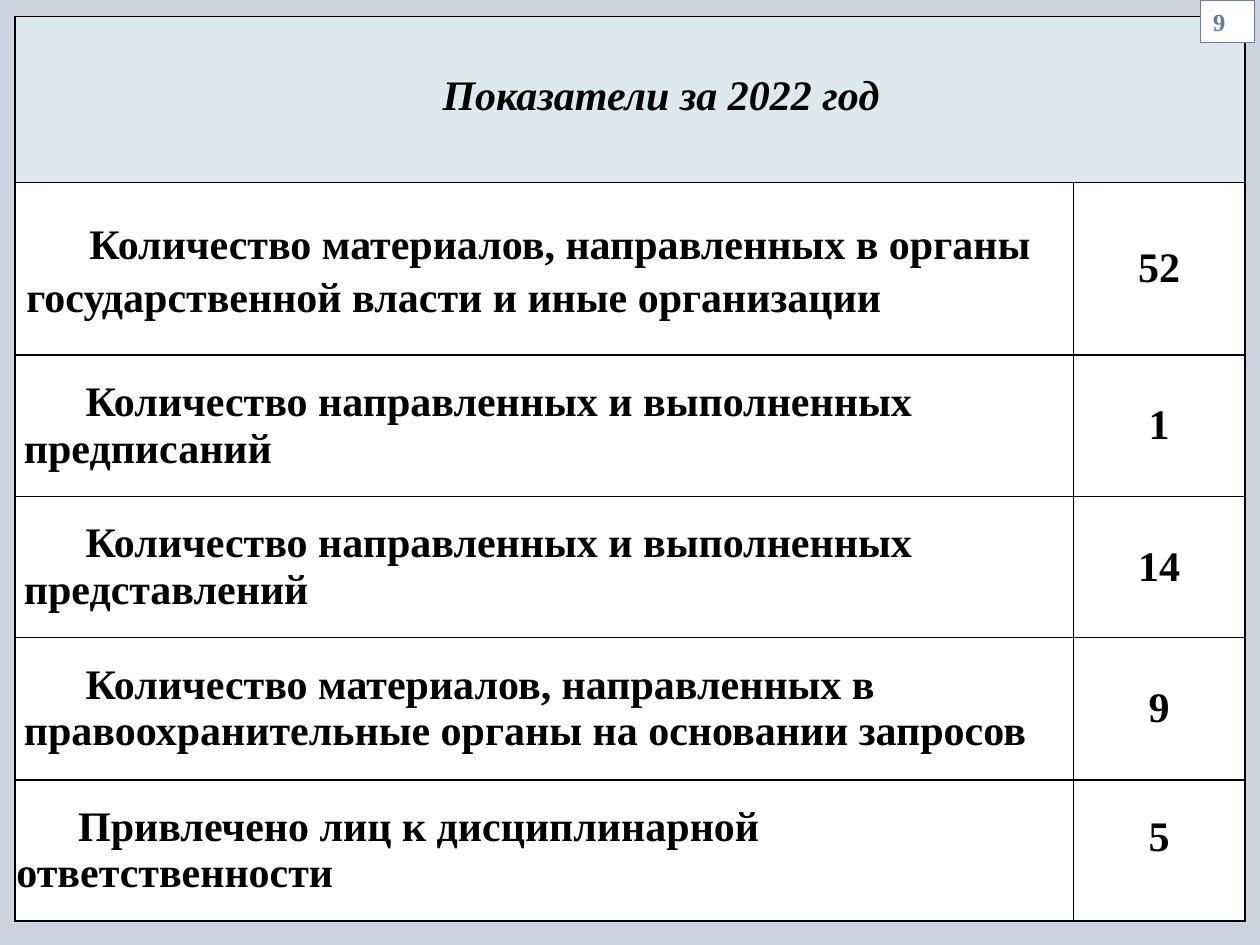
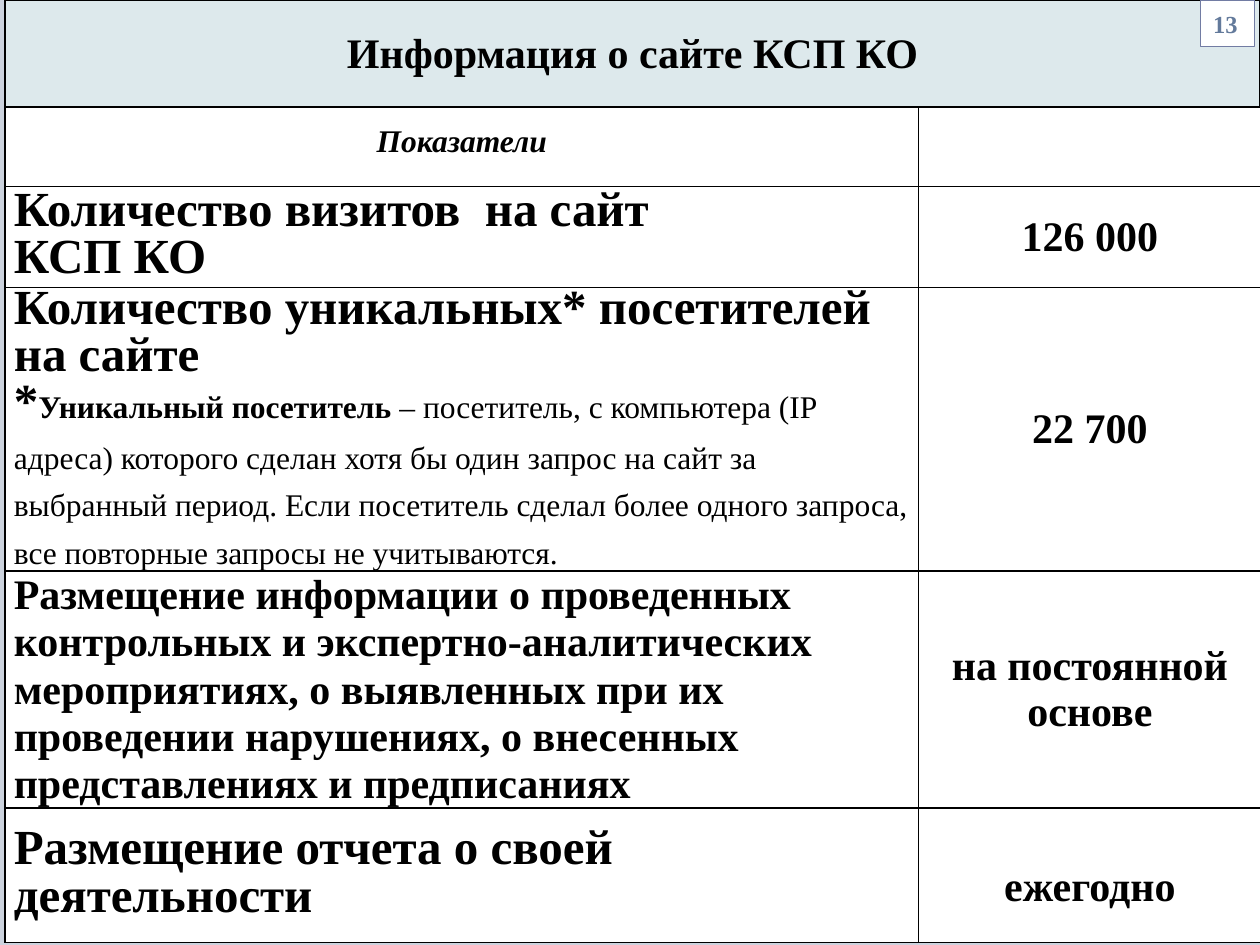
import dataclasses
import itertools

import pptx
import pptx.dml.color
import pptx.enum.shapes
import pptx.enum.text
import pptx.oxml
import pptx.oxml.ns
import pptx.util

Inches = pptx.util.Inches
Pt = pptx.util.Pt
CENTER = pptx.enum.text.PP_ALIGN.CENTER
LEFT = pptx.enum.text.PP_ALIGN.LEFT
MIDDLE = pptx.enum.text.MSO_ANCHOR.MIDDLE
TOP = pptx.enum.text.MSO_ANCHOR.TOP

BACKGROUND = "CCD3DE"
HEADER = "DDE9EC"
WHITE = "FFFFFF"
BLACK = "000000"
BADGE_LINE = "727CA3"
BADGE_TEXT = "637A9B"
WIDE_MARGIN = (0.09, 0.05)
CELL_MARGIN = (0.07, 0)
TIGHT_MARGIN = (0.01, 0)


def color(value):
    return pptx.dml.color.RGBColor.from_string(value)


@dataclasses.dataclass
class Line:
    """One paragraph; spans hold (text, size, bold) where runs differ."""
    text: str = ""
    size: float = 24
    italic: bool = False
    align: int = LEFT
    indent: float = 0
    spacing: object = None
    spans: tuple = ()


@dataclasses.dataclass
class Cell:
    lines: tuple
    margin: tuple = CELL_MARGIN
    anchor: int = MIDDLE
    fill: str = WHITE


def centered(text, spacing=None, **cell_options):
    return Cell((Line(text, align=CENTER, spacing=spacing),), **cell_options)


def indented(text, **cell_options):
    return Cell((Line(text, indent=0.49),), **cell_options)


def tight(*lines):
    """Left-aligned cell whose lines are set 27 points apart."""
    for line in lines:
        line.spacing = Pt(27)
    return Cell(lines)


class Report:
    font_name = "Times New Roman"

    def __init__(self):
        self.deck = pptx.Presentation()
        self.deck.slide_width = Inches(10)
        self.deck.slide_height = Inches(7.5)
        self.page = None

    def add_page(self):
        self.page = self.deck.slides.add_slide(self.deck.slide_layouts[6])
        fill = self.page.background.fill
        fill.solid()
        fill.fore_color.rgb = color(BACKGROUND)

    def set_text(self, para, line, text_color=BLACK):
        para.alignment = line.align
        if line.spacing:
            para.line_spacing = line.spacing
        if line.indent:
            properties = para._p.get_or_add_pPr()
            properties.set("marL", "0")
            properties.set("indent", str(Inches(line.indent)))
        font = para.font
        font.name = self.font_name
        font.size = Pt(line.size)
        font.italic = line.italic
        font.color.rgb = color(text_color)
        if not line.spans:
            font.bold = True
            para.add_run().text = line.text
        for text, size, bold in line.spans:
            span = para.add_run()
            span.text = text
            span.font.size = Pt(size)
            span.font.bold = bold

    def border(self, cell):
        properties = cell._tc.get_or_add_tcPr()
        for position, side in enumerate(("lnL", "lnR", "lnT", "lnB")):
            properties.insert(position, pptx.oxml.parse_xml(
                f'<a:{side} {pptx.oxml.ns.nsdecls("a")} w="{Pt(1)}">'
                f'<a:solidFill><a:srgbClr val="{BLACK}"/></a:solidFill></a:{side}>'))

    def fill_cell(self, cell, content):
        cell.fill.solid()
        cell.fill.fore_color.rgb = color(content.fill)
        cell.vertical_anchor = content.anchor
        cell.margin_left = cell.margin_right = Inches(content.margin[0])
        cell.margin_top = cell.margin_bottom = Inches(content.margin[1])
        frame = cell.text_frame
        for number, line in enumerate(content.lines):
            para = frame.add_paragraph() if number else frame.paragraphs[0]
            self.set_text(para, line)
        self.border(cell)

    def table(self, left, top, widths, heights, rows):
        """Draw a table; a row with a single cell spans all columns."""
        frame = self.page.shapes.add_table(
            len(heights), len(widths), Inches(left), Inches(top),
            Inches(sum(widths)), Inches(sum(heights)))
        grid = frame.table
        grid.first_row = grid.horz_banding = False
        for column, width in zip(grid.columns, widths):
            column.width = Inches(width)
        for row, height in zip(grid.rows, heights):
            row.height = Inches(height)
        for index, contents in enumerate(rows):
            blank = Cell((), fill=contents[0].fill)
            padded = itertools.chain(contents, itertools.repeat(blank))
            for column, content in zip(range(len(widths)), padded):
                self.fill_cell(grid.cell(index, column), content)
            if len(contents) < len(widths):
                grid.cell(index, 0).merge(grid.cell(index, len(widths) - 1))

    def badge(self, number, height):
        box = self.page.shapes.add_shape(
            pptx.enum.shapes.MSO_SHAPE.RECTANGLE,
            Inches(9.53), 0, Inches(0.43), Inches(height))
        box.shadow.inherit = False
        box.fill.solid()
        box.fill.fore_color.rgb = color(WHITE)
        box.line.color.rgb = color(BADGE_LINE)
        box.line.width = Pt(0.75)
        box.text_frame.vertical_anchor = MIDDLE
        self.set_text(box.text_frame.paragraphs[0], Line(number, size=14), BADGE_TEXT)


def add_results_page(report):
    report.add_page()
    title = Line("Показатели за 2022 год", italic=True, align=CENTER,
                 indent=0.49, spacing=Pt(23))
    materials = Line("Количество материалов, направленных в органы "
                     "государственной власти и иные организации",
                     indent=0.5, spacing=Pt(30))
    report.table(0.12, 0.13, (8.4, 1.36), (1.32, 1.37, 1.12, 1.12, 1.13, 1.12), (
        (Cell((title,), WIDE_MARGIN, fill=HEADER),),
        (Cell((materials,), WIDE_MARGIN),
         centered("52", 0.95, margin=WIDE_MARGIN)),
        (indented("Количество направленных и выполненных предписаний"),
         centered("1")),
        (indented("Количество направленных и выполненных представлений"),
         centered("14")),
        (indented("Количество материалов, направленных в "
                  "правоохранительные органы на основании запросов"),
         centered("9")),
        (indented("Привлечено лиц к дисциплинарной ответственности",
                  margin=TIGHT_MARGIN),
         centered("5", Pt(12), margin=TIGHT_MARGIN)),
    ))
    report.badge("9", 0.34)


def add_website_page(report):
    report.add_page()
    # Heading band
    report.table(0.04, 0, (9.96,), (0.86,), (
        (centered("Информация о сайте КСП КО", margin=WIDE_MARGIN, fill=HEADER),),
    ))
    report.badge("13", 0.37)

    # Website figures
    heading = Line("Показатели", size=18, italic=True, align=CENTER, spacing=1.5)
    footnote = Line(size=18, spans=(
        ("*", 28, True),
        ("Уникальный посетитель", 18, True),
        (" – посетитель, с компьютера (IP адреса) которого сделан хотя бы один "
         "запрос на сайт за выбранный период. Если посетитель сделал более "
         "одного запроса, все повторные запросы не учитываются.", 18, False),
    ))
    report.table(0.04, 0.85, (7.25, 2.72), (0.63, 0.8, 2.22, 1.88, 1.07), (
        (Cell((heading,), anchor=TOP), Cell(())),
        (tight(Line("Количество визитов  на сайт", size=28),
               Line("КСП КО", size=28)),
         centered("126 000")),
        (tight(Line("Количество уникальных* посетителей на сайте", size=28),
               footnote),
         centered("22 700")),
        (tight(Line("Размещение информации о проведенных контрольных и "
                    "экспертно-аналитических мероприятиях, о выявленных при их "
                    "проведении нарушениях, о внесенных представлениях и "
                    "предписаниях")),
         centered("на постоянной основе")),
        (tight(Line("Размещение отчета о своей деятельности", size=28)),
         centered("ежегодно", 1.5)),
    ))


def main():
    report = Report()
    add_results_page(report)
    add_website_page(report)
    report.deck.save("out.pptx")


if __name__ == "__main__":
    main()
